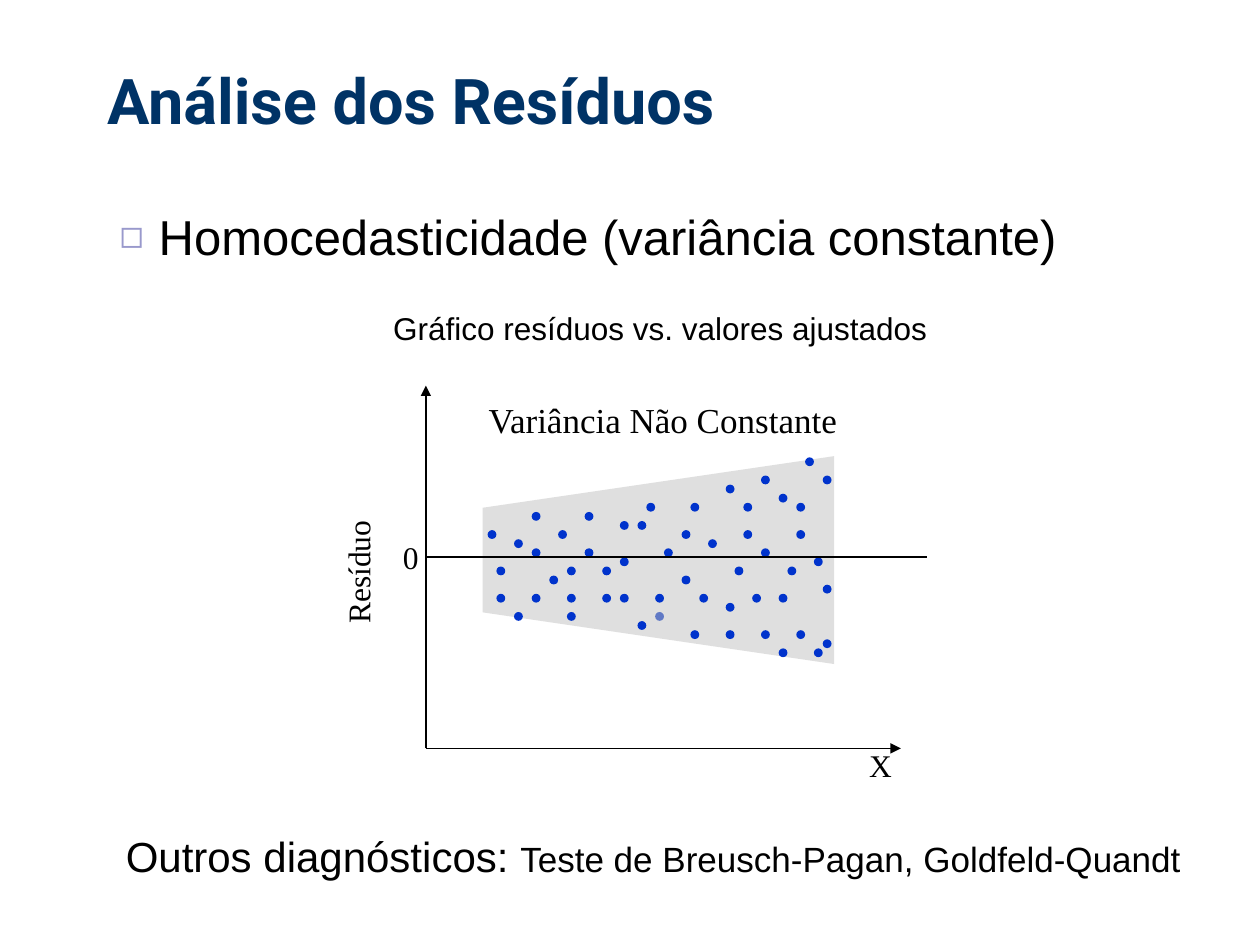
from dataclasses import dataclass

import pptx
import pptx.dml.color
import pptx.enum.shapes
import pptx.enum.text
import pptx.oxml.ns
import pptx.util
from lxml import etree

COLORS = {"title": "003366", "text": "000000", "bullet": "9999CC",
          "dot": "0033CC", "wedge": "C0C0C0", "axis": "000000"}
SANS, SERIF = "Arial", "Times New Roman"

# The slide is a grid of 1000 columns by 750 rows
CELL = pptx.util.Inches(0.01)
COLUMNS, ROWS = 1000, 750

# Residuals sit on a finer grid: row -> columns
DOT_LEFT, DOT_TOP, DOT_SIZE = 387, 363, 7
DOT_COLUMN, DOT_ROW = 7, 7.22
RESIDUALS = {
    0: [36], 2: [31, 38], 3: [27], 4: [33], 5: [18, 23, 29, 35],
    6: [5, 11], 7: [15, 17], 8: [0, 8, 22, 29, 35], 9: [3, 25],
    10: [5, 11, 20, 31], 11: [15, 37], 12: [1, 9, 13, 28, 34],
    13: [7, 22], 14: [38], 15: [1, 5, 9, 13, 15, 19, 24, 30, 33],
    16: [27], 17: [3, 9], 18: [17], 19: [23, 27, 31, 35],
    20: [38], 21: [33, 37],
}
COVERED_RESIDUAL = (19, 17)
WEDGE = [(662, 362), (383, 403), (383, 486), (662, 527)]


@dataclass(frozen=True)
class Box:
    left: float
    top: float
    width: float
    height: float

    def emu(self) -> list[int]:
        return [round(n * CELL) for n in (self.left, self.top, self.width, self.height)]


@dataclass(frozen=True)
class Label:
    text: str
    box: Box
    size: int
    wrap: bool = False
    rotation: int = 0


@dataclass(frozen=True)
class Axis:
    start: tuple[int, int]
    end: tuple[int, int]
    arrow: bool


LABELS = [
    Label("0", Box(310, 422, 33, 40), 18),
    Label("X", Box(680, 587, 38, 40), 18),
    Label("Variância Não Constante", Box(378, 311, 299, 43), 20),
    Label("Resíduo", Box(221, 422, 126, 40), 18, True, 270),
]
AXES = [
    Axis((338, 442), (736, 442), False),
    Axis((338, 594), (338, 306), True),
    Axis((338, 594), (715, 594), True),
]


def rgb(name: str) -> pptx.dml.color.RGBColor:
    return pptx.dml.color.RGBColor.from_string(COLORS[name])


def apply(target, values: dict) -> None:
    for attribute, value in values.items():
        setattr(target, attribute, value)


def add_xml(parent, tag: str, **attributes: str):
    return etree.SubElement(parent, pptx.oxml.ns.qn(tag), attributes)


def place(shape, box: Box) -> None:
    apply(shape, dict(zip(("left", "top", "width", "height"), box.emu())))


def write(paragraph, text: str, size: int, font: str, color: str = "text", bold: bool = False) -> None:
    run = paragraph.add_run()
    run.text = text
    apply(run.font, {"size": pptx.util.Pt(size), "name": font, "bold": bold})
    run.font.color.rgb = rgb(color)


def paint(shape, color: str) -> None:
    shape.shadow.inherit = False
    shape.fill.solid()
    shape.fill.fore_color.rgb = rgb(color)
    shape.line.fill.background()


def add_dot(slide, column: int, row: int) -> None:
    box = Box(DOT_LEFT + column * DOT_COLUMN, DOT_TOP + row * DOT_ROW, DOT_SIZE, DOT_SIZE)
    connector = pptx.enum.shapes.MSO_SHAPE.FLOWCHART_CONNECTOR
    paint(slide.shapes.add_shape(connector, *box.emu()), "dot")


def add_wedge(slide) -> None:
    builder = slide.shapes.build_freeform(*WEDGE[0], scale=CELL)
    builder.add_line_segments(WEDGE[1:], close=True)
    wedge = builder.convert_to_shape()
    paint(wedge, "wedge")
    fill_color = wedge.fill._xPr.find(".//" + pptx.oxml.ns.qn("a:srgbClr"))
    add_xml(fill_color, "a:alpha", val="50000")


def add_axis(slide, axis: Axis) -> None:
    ends = [n * CELL for n in axis.start + axis.end]
    line = slide.shapes.add_connector(pptx.enum.shapes.MSO_CONNECTOR.STRAIGHT, *ends)
    line.line.color.rgb = rgb("axis")
    line.line.width = pptx.util.Pt(0.75)
    if axis.arrow:
        add_xml(line.line._get_or_add_ln(), "a:tailEnd", type="triangle")
    add_xml(line._element.spPr, "a:effectLst")


def add_label(slide, label: Label) -> None:
    box = slide.shapes.add_textbox(*label.box.emu())
    box.rotation = label.rotation
    box.text_frame.word_wrap = label.wrap
    write(box.text_frame.paragraphs[0], label.text, label.size, SERIF)


def fill_title(title) -> None:
    place(title, Box(75, 42, 892, 83))
    apply(title.text_frame, {"vertical_anchor": pptx.enum.text.MSO_ANCHOR.TOP,
                             "auto_size": pptx.enum.text.MSO_AUTO_SIZE.NONE,
                             "margin_top": 7 * CELL})
    heading = title.text_frame.paragraphs[0]
    heading.alignment = pptx.enum.text.PP_ALIGN.LEFT
    write(heading, "Análise dos Resíduos", 36, "Roboto", "title", True)


def fill_body(body) -> None:
    place(body, Box(35, 131, 928, 543))
    apply(body.text_frame, {"margin_top": 33 * CELL,
                            "auto_size": pptx.enum.text.MSO_AUTO_SIZE.NONE})
    topic = body.text_frame.paragraphs[0]
    caption = body.text_frame.add_paragraph()
    apply(topic, {"space_before": pptx.util.Pt(0)})
    apply(caption, {"space_before": pptx.util.Pt(25),
                    "alignment": pptx.enum.text.PP_ALIGN.CENTER})
    write(topic, "Homocedasticidade (variância constante)", 28, SANS)
    write(caption, "Gráfico resíduos vs. valores ajustados", 18, SANS)

    # Hanging indent for both lines, square bullet for the topic only
    for paragraph in (topic, caption):
        properties = paragraph._p.get_or_add_pPr()
        properties.set("marL", str(81 * CELL))
        properties.set("indent", str(-31 * CELL))
    topic_properties = topic._p.get_or_add_pPr()
    add_xml(add_xml(topic_properties, "a:buClr"), "a:srgbClr", val=COLORS["bullet"])
    add_xml(topic_properties, "a:buSzPct", val="80000")
    add_xml(topic_properties, "a:buChar", char="◻")
    add_xml(caption._p.get_or_add_pPr(), "a:buNone")


def add_diagnostics(slide) -> None:
    box = slide.shapes.add_textbox(*Box(90, 651, 866, 60).emu())
    apply(box.text_frame, {"word_wrap": True, "margin_top": 8 * CELL})
    line = box.text_frame.paragraphs[0]
    write(line, "Outros diagnósticos: ", 24, SANS)
    write(line, "Teste de Breusch-Pagan, Goldfeld-Quandt", 20, SANS)


def main() -> None:
    deck = pptx.Presentation()
    apply(deck, {"slide_width": COLUMNS * CELL, "slide_height": ROWS * CELL})
    slide = deck.slides.add_slide(deck.slide_layouts[1])

    # Title and topic
    fill_title(slide.shapes.title)
    fill_body(slide.placeholders[1])

    # Residual plot
    add_dot(slide, *COVERED_RESIDUAL)
    add_wedge(slide)
    for row, columns in RESIDUALS.items():
        for column in columns:
            add_dot(slide, column, row)
    for axis in AXES:
        add_axis(slide, axis)
    for label in LABELS:
        add_label(slide, label)

    # Other tests
    add_diagnostics(slide)
    deck.save("out.pptx")


if __name__ == "__main__":
    main()
